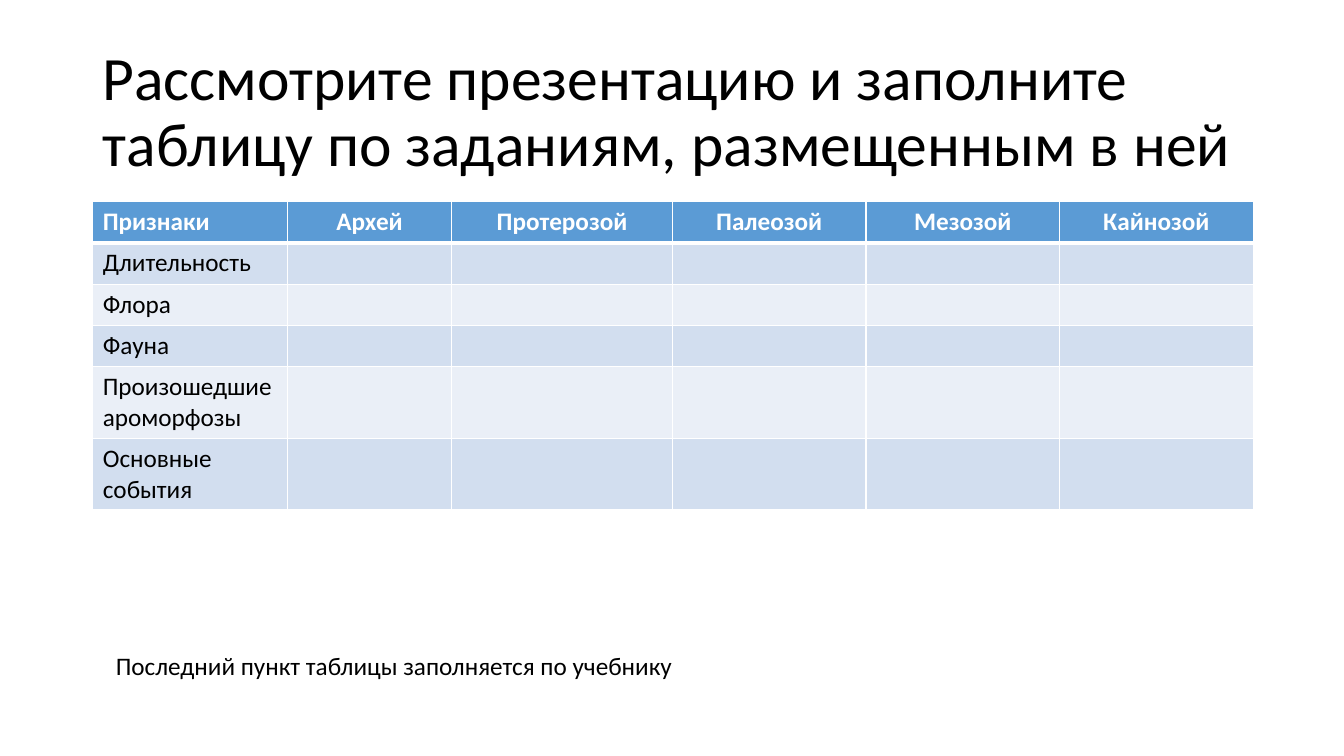
from lxml import etree
from pptx import Presentation
from pptx.dml.color import RGBColor
from pptx.enum.text import MSO_ANCHOR, PP_ALIGN
from pptx.oxml.ns import qn
from pptx.util import Inches, Pt

MIDDLE, TOP = MSO_ANCHOR.MIDDLE, MSO_ANCHOR.TOP
LEFT, CENTER = PP_ALIGN.LEFT, PP_ALIGN.CENTER

BLACK = RGBColor(0x00, 0x00, 0x00)
WHITE = RGBColor(0xFF, 0xFF, 0xFF)
BLUE = RGBColor(0x5B, 0x9B, 0xD5)
BANDS = (RGBColor(0xEA, 0xEF, 0xF7), RGBColor(0xD2, 0xDE, 0xEF))

FONT = "Calibri"
WIDTH, HEIGHT = Inches(13.33), Inches(7.5)
MARGIN = Inches(0.92)
LINE = Inches(0.41)
TALL = Inches(0.71)

TITLE = ("Рассмотрите презентацию и заполните таблицу "
         "по заданиям, размещенным в ней")
NOTE = "Последний пункт таблицы заполняется по учебнику"
ERAS = ("Признаки", "Архей", "Протерозой", "Палеозой", "Мезозой", "Кайнозой")
TRAITS = ("Длительность", "Флора", "Фауна",
          "Произошедшие ароморфозы", "Основные события")
COLS = (1.93, 1.63, 2.19, 1.92, 1.92, 1.92)
ROWS = (LINE,) * 4 + (TALL,) * 2


def style(par, size, color=BLACK, bold=False):
    font = par.font
    font.name, font.size, font.bold = FONT, Pt(size), bold
    font.color.rgb = color


def add_text(slide, text, box, size, anchor=TOP, spacing=1.0):
    frame = slide.shapes.add_textbox(*box).text_frame
    frame.word_wrap = True
    frame.vertical_anchor = anchor
    frame.text = text
    par = frame.paragraphs[0]
    par.line_spacing = spacing
    style(par, size)


def add_edges(cell, bottom):
    """Draw white borders; bottom is the lower line's width in points."""
    props = cell._tc.get_or_add_tcPr()
    for side, width in (("L", 1), ("R", 1), ("T", 1), ("B", bottom)):
        edge = etree.SubElement(props, qn(f"a:ln{side}"), w=str(Pt(width)))
        fill = etree.SubElement(edge, qn("a:solidFill"))
        etree.SubElement(fill, qn("a:srgbClr"), val=str(WHITE))


def fill_cell(cell, text, row, col):
    head = row == 0
    add_edges(cell, 3 if head else 1)
    cell.fill.solid()
    cell.fill.fore_color.rgb = BLUE if head else BANDS[row % 2]
    cell.text = text
    par = cell.text_frame.paragraphs[0]
    par.alignment = CENTER if head and col else LEFT
    style(par, 18, WHITE if head else BLACK, head)


def add_grid(slide):
    grid = slide.shapes.add_table(len(ROWS), len(COLS), MARGIN, Inches(2),
                                  Inches(sum(COLS)), sum(ROWS)).table
    for col, width in zip(grid.columns, COLS):
        col.width = Inches(width)
    for row, height in zip(grid.rows, ROWS):
        row.height = height
    lines = [ERAS] + [(trait,) + ("",) * (len(COLS) - 1) for trait in TRAITS]
    for row, line in enumerate(lines):
        for col, text in enumerate(line):
            fill_cell(grid.cell(row, col), text, row, col)


def main():
    deck = Presentation()
    deck.slide_width, deck.slide_height = WIDTH, HEIGHT
    slide = deck.slides.add_slide(deck.slide_layouts[6])
    add_text(slide, TITLE,
             (MARGIN, Inches(0.4), WIDTH - 2 * MARGIN, Inches(1.45)),
             44, MIDDLE, 0.9)
    add_grid(slide)
    add_text(slide, NOTE,
             (Inches(1.05), Inches(6.4), Inches(8.82), Inches(0.4)), 18)
    deck.save("out.pptx")


if __name__ == "__main__":
    main()
